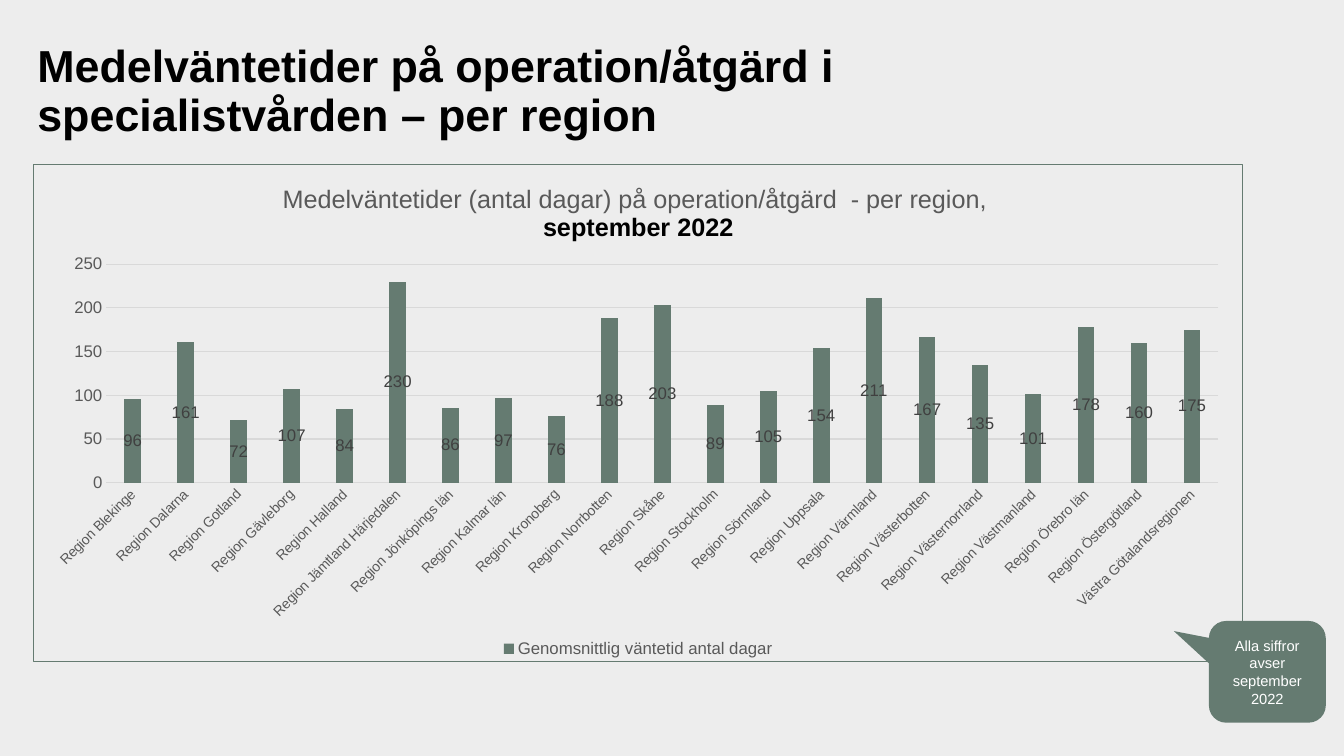
from dataclasses import dataclass

from lxml import etree
from pptx import Presentation
from pptx import util as u
from pptx.chart.data import CategoryChartData
from pptx.dml.color import RGBColor
from pptx.enum import chart as ch, shapes, text
from pptx.oxml import parse_xml
from pptx.oxml.ns import nsdecls, qn


@dataclass(frozen=True)
class Theme:
    font: str = "Arial"
    background: str = "EDEDED"
    green: str = "657B71"
    black: str = "000000"
    white: str = "FFFFFF"
    grey: str = "595959"
    label: str = "404040"
    grid: str = "D9D9D9"
    title: float = 32
    chart_title: float = 18
    body: float = 12
    category: float = 10
    callout: float = 10.5


WAITING_DAYS = {
    "Region Blekinge": 96, "Region Dalarna": 161, "Region Gotland": 72,
    "Region Gävleborg": 107, "Region Halland": 84,
    "Region Jämtland Härjedalen": 230, "Region Jönköpings län": 86,
    "Region Kalmar län": 97, "Region Kronoberg": 76,
    "Region Norrbotten": 188, "Region Skåne": 203, "Region Stockholm": 89,
    "Region Sörmland": 105, "Region Uppsala": 154, "Region Värmland": 211,
    "Region Västerbotten": 167, "Region Västernorrland": 135,
    "Region Västmanland": 101, "Region Örebro län": 178,
    "Region Östergötland": 160, "Västra Götalandsregionen": 175,
}


def apply(target, values):
    for name, value in values.items():
        setattr(target, name, value)


def box(*lengths):
    return dict(zip(("left", "top", "width", "height"), map(u.Inches, lengths)))


class SlideBuilder:
    def __init__(self, prs, theme):
        self.theme = theme
        self.s = prs.slides.add_slide(prs.slide_layouts[5])
        fill = self.s.background.fill
        fill.solid()
        fill.fore_color.rgb = RGBColor.from_string(theme.background)

    def style(self, font, size, color, bold=False):
        apply(font, {"name": self.theme.font, "size": u.Pt(size), "bold": bold})
        font.color.rgb = RGBColor.from_string(color)

    def line(self, fmt, color):
        fmt.color.rgb = RGBColor.from_string(color)
        fmt.width = u.Pt(0.75)

    def title(self, wording, place):
        sp = self.s.shapes.title
        apply(sp, place)
        tf = sp.text_frame
        apply(tf, {"word_wrap": True, "auto_size": text.MSO_AUTO_SIZE.NONE,
                   "vertical_anchor": text.MSO_ANCHOR.BOTTOM,
                   "margin_left": 0, "margin_right": 0,
                   "margin_top": 0, "margin_bottom": 0})
        p = tf.paragraphs[0]
        apply(p, {"alignment": text.PP_ALIGN.LEFT, "line_spacing": 0.9})
        r = p.add_run()
        r.text = wording
        self.style(r.font, self.theme.title, self.theme.black, True)

    def column_chart(self, name, values, title_lines, place):
        t = self.theme
        data = CategoryChartData()
        data.categories = list(values)
        data.add_series(name, list(values.values()))
        chart = self.s.shapes.add_chart(
            ch.XL_CHART_TYPE.COLUMN_CLUSTERED, *place.values(), data).chart
        self.style(chart.font, t.body, t.black)

        # Chart title
        chart.has_title = True
        tf = chart.chart_title.text_frame
        for i, (wording, color, bold) in enumerate(title_lines):
            p = tf.add_paragraph() if i else tf.paragraphs[0]
            r = p.add_run()
            r.text = wording
            self.style(r.font, t.chart_title, color, bold)
        chart.chart_title.include_in_layout = False

        # Columns and their values
        plot = chart.plots[0]
        apply(plot, {"gap_width": 219, "overlap": -27,
                     "vary_by_categories": False, "has_data_labels": True})
        fill = plot.series[0].format.fill
        fill.solid()
        fill.fore_color.rgb = RGBColor.from_string(t.green)
        labels = plot.data_labels
        apply(labels, {"show_value": True,
                       "position": ch.XL_LABEL_POSITION.CENTER})
        self.style(labels.font, t.body, t.label)

        # Axes
        cat, val = chart.category_axis, chart.value_axis
        for axis, size in ((cat, t.category), (val, t.body)):
            apply(axis, {"major_tick_mark": ch.XL_TICK_MARK.NONE,
                         "minor_tick_mark": ch.XL_TICK_MARK.NONE})
            self.style(axis.tick_labels.font, size, t.grey)
        self.line(cat.format.line, t.grid)
        cat._element.find(qn("c:txPr")).find(qn("a:bodyPr")).set("rot", "-2700000")
        apply(val, {"minimum_scale": 0, "maximum_scale": 250, "major_unit": 50})
        val.format.line.fill.background()
        self.line(val.major_gridlines.format.line, t.grid)

        # Legend
        chart.has_legend = True
        apply(chart.legend, {"position": ch.XL_LEGEND_POSITION.BOTTOM,
                             "include_in_layout": False})
        self.style(chart.legend.font, t.body, t.grey)

        self.plot_layout(chart, x=0.06, y=0.2, w=0.92, h=0.44)
        self.chart_border(chart)

    def plot_layout(self, chart, **fractions):
        area = chart._chartSpace.chart.plotArea
        for old in area.findall(qn("c:layout")):
            area.remove(old)
        layout = etree.Element(qn("c:layout"))
        manual = etree.SubElement(layout, qn("c:manualLayout"))
        settings = {"layoutTarget": "inner", "xMode": "edge", "yMode": "edge"}
        for tag, value in {**settings, **fractions}.items():
            etree.SubElement(manual, qn("c:" + tag)).set("val", str(value))
        area.insert(0, layout)

    def chart_border(self, chart):
        chart._chartSpace.chart.addnext(parse_xml(
            f'<c:spPr {nsdecls("c", "a")}><a:noFill/><a:ln w="9525"><a:solidFill>'
            f'<a:srgbClr val="{self.theme.green}"/></a:solidFill></a:ln></c:spPr>'))

    def callout(self, lines, place, adjustments):
        sp = self.s.shapes.add_shape(
            shapes.MSO_SHAPE.ROUNDED_RECTANGULAR_CALLOUT, *place.values())
        sp.shadow.inherit = False
        for i, value in enumerate(adjustments):
            sp.adjustments[i] = value
        sp.fill.solid()
        sp.fill.fore_color.rgb = RGBColor.from_string(self.theme.green)
        sp.line.fill.background()
        tf = sp.text_frame
        apply(tf, {"word_wrap": True, "vertical_anchor": text.MSO_ANCHOR.MIDDLE})
        for i, wording in enumerate(lines):
            p = tf.add_paragraph() if i else tf.paragraphs[0]
            p.alignment = text.PP_ALIGN.CENTER
            r = p.add_run()
            r.text = wording
            self.style(r.font, self.theme.callout, self.theme.white)


def main():
    prs = Presentation()
    apply(prs, {"slide_width": u.Inches(13.33), "slide_height": u.Inches(7.5)})
    theme = Theme()
    slide = SlideBuilder(prs, theme)

    # Heading
    slide.title("Medelväntetider på operation/åtgärd i specialistvården – per region",
                box(0.37, 0.19, 10.89, 1.21))

    # Waiting times by region
    slide.column_chart(
        "Genomsnittlig väntetid antal dagar", WAITING_DAYS,
        [("Medelväntetider (antal dagar) på operation/åtgärd  - per region, ",
          theme.grey, False),
         ("september 2022", theme.black, True)],
        box(0.33, 1.63, 12, 4.94))

    # Note on the period
    slide.callout(["Alla siffror avser", "september 2022"],
                  box(11.99, 6.16, 1.16, 1.01), (-0.8, -0.4, 0.17))

    prs.save("out.pptx")


if __name__ == "__main__":
    main()
